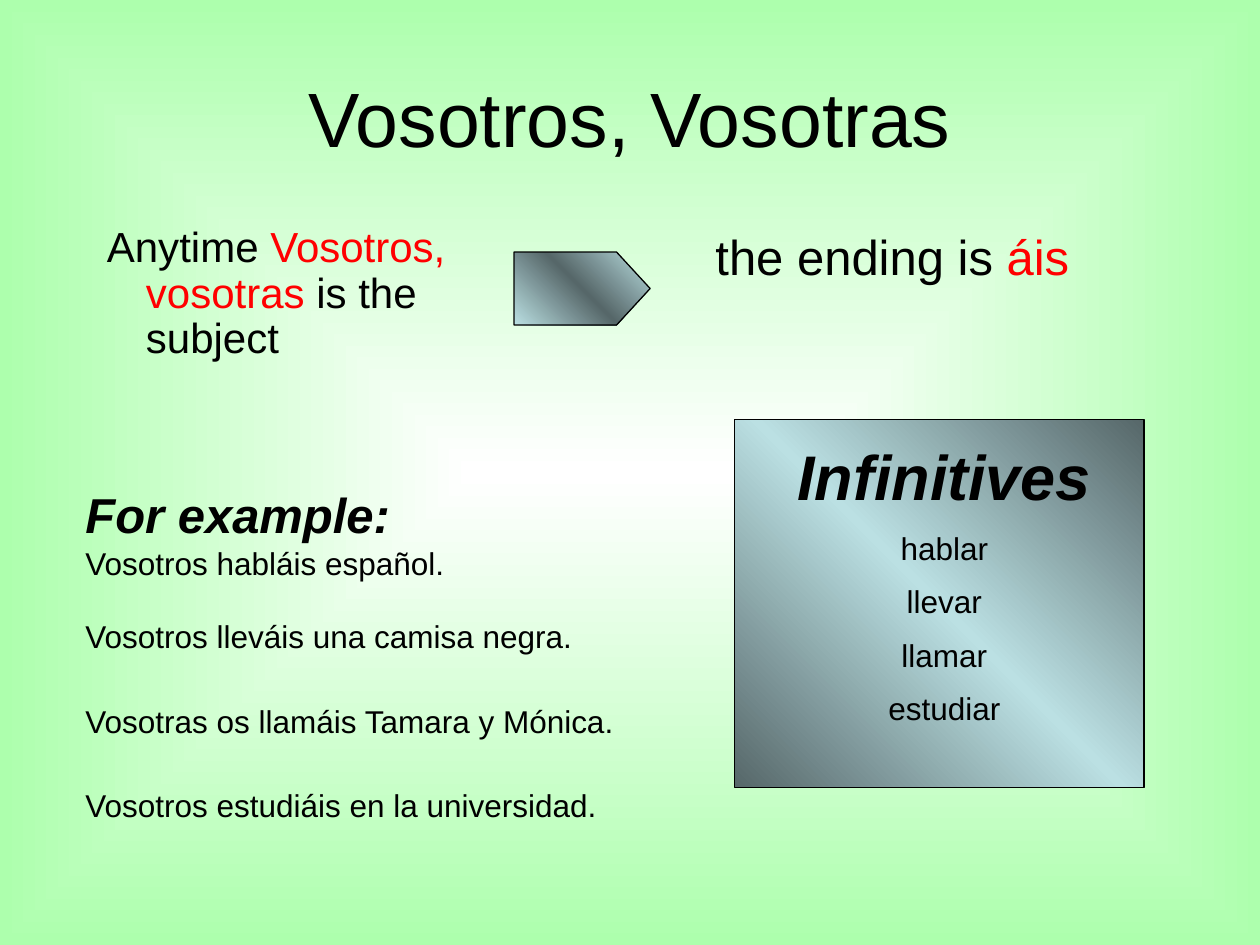
from lxml import etree
from pptx import Presentation
from pptx.dml.color import RGBColor
from pptx.enum import shapes, text
from pptx.oxml.ns import qn
from pptx.util import Inches, Pt

BLACK = RGBColor(0, 0, 0)
RED = RGBColor(0xFF, 0, 0)
WHITE = RGBColor(0xFF, 0xFF, 0xFF)
GREEN = RGBColor(0xAD, 0xFF, 0xAD)
LIGHT = RGBColor(0xBB, 0xE0, 0xE3)
DARK = RGBColor(0x56, 0x67, 0x69)
FONT = "Arial"

# Content: a paragraph is a list of (text, size, colour, bold italic)
TITLE = [("Vosotros, Vosotras", 44, BLACK, False)]
CAUSE = [("Anytime ", 24, BLACK, False),
         ("Vosotros, vosotras ", 24, RED, False),
         ("is the subject", 24, BLACK, False)]
RESULT = [("the ending is ", 28, BLACK, False), ("áis", 28, RED, False)]
HEAD = [("For example:", 28, BLACK, True)]
FIRST = "Vosotros habláis español."
REST = ["Vosotros lleváis una camisa negra.",
        "Vosotras os llamáis Tamara y Mónica.",
        "Vosotros estudiáis en la universidad."]
VERBS = ["hablar", "llevar", "llamar", "estudiar"]

deck = Presentation()
deck.slide_width, deck.slide_height = Inches(10), Inches(7.5)
slide = deck.slides.add_slide(deck.slide_layouts[6])


def plain(words):
    return [(words, 18, BLACK, False)]


def blend(root, stops, angle=None):
    """Set the gradient stops: linear with an angle, else from the centre."""
    grad = root.find(".//" + qn("a:gradFill"))
    for kid in list(grad):
        grad.remove(kid)
    row = etree.SubElement(grad, qn("a:gsLst"))
    for i, tone in enumerate(stops):
        place = 100000 * i // (len(stops) - 1)
        stop = etree.SubElement(row, qn("a:gs"), pos=str(place))
        etree.SubElement(stop, qn("a:srgbClr"), val=str(tone))
    if angle is None:
        way = etree.SubElement(grad, qn("a:path"), path="rect")
        etree.SubElement(way, qn("a:fillToRect"),
                         {side: "50000" for side in "ltrb"})
    else:
        etree.SubElement(grad, qn("a:lin"), ang=str(angle * 60000), scaled="1")


def add_form(kind, box, stops):
    form = slide.shapes.add_shape(kind, *map(Inches, box))
    form.shadow.inherit = False
    form.fill.gradient()
    blend(form.element, stops, 315)
    form.line.color.rgb = BLACK
    form.line.width = Pt(0.75)
    return form


def add_text(box, paras, align=text.PP_ALIGN.LEFT, hang=False, before=0):
    frame = slide.shapes.add_textbox(*map(Inches, box)).text_frame
    frame.word_wrap = True
    for i, runs in enumerate(paras):
        para = frame.add_paragraph() if i else frame.paragraphs[0]
        para.alignment = align
        props = para._p.get_or_add_pPr()
        if hang:
            props.set("marL", str(Inches(0.81)))
            props.set("indent", str(Inches(-0.31)))
        if before:
            gap = etree.SubElement(props, qn("a:spcBef"))
            etree.SubElement(gap, qn("a:spcPct"), val=str(before * 1000))
        for words, size, tone, strong in runs:
            run = para.add_run()
            run.text = words
            run.font.name, run.font.size = FONT, Pt(size)
            run.font.color.rgb = tone
            run.font.bold = run.font.italic = strong
    return frame


# Background and title
slide.background.fill.gradient()
blend(slide.element, [WHITE, GREEN])
frame = add_text((0.5, 0.3, 9, 1.25), [TITLE], text.PP_ALIGN.CENTER)
frame.vertical_anchor = text.MSO_ANCHOR.MIDDLE

# Rule: subject, arrow, ending
arrow = add_form(shapes.MSO_SHAPE.PENTAGON, (4.08, 2, 1.08, 0.58),
                 [LIGHT, DARK, LIGHT])
arrow.adjustments[0] = 0.46
add_text((5.08, 1.75, 4.42, 4.95), [RESULT], hang=True)
frame = add_text((0.25, 1.75, 3.75, 1.67), [CAUSE], hang=True)
frame.paragraphs[0].line_spacing = 0.9

# Examples
add_text((0.58, 3.8, 7.67, 0.87), [HEAD, plain(FIRST)])
for i, words in enumerate(REST):
    add_text((0.58, 4.85 + i * 0.67, 7.83, 0.4), [plain(words)])

# Infinitives panel, last verb set slightly to the left
add_form(shapes.MSO_SHAPE.RECTANGLE, (5.83, 3.33, 3.25, 2.92),
         [DARK, LIGHT, DARK])
frame = add_text((6.08, 3.42, 2.83, 2.51),
                 [[("Infinitives", 36, BLACK, True)]] + [plain(v) for v in VERBS],
                 text.PP_ALIGN.CENTER, before=50)
last = frame.paragraphs[-1]._p.get_or_add_pPr()
last.set("marL", "0")
last.set("indent", str(Inches(-0.21)))

deck.save("out.pptx")
